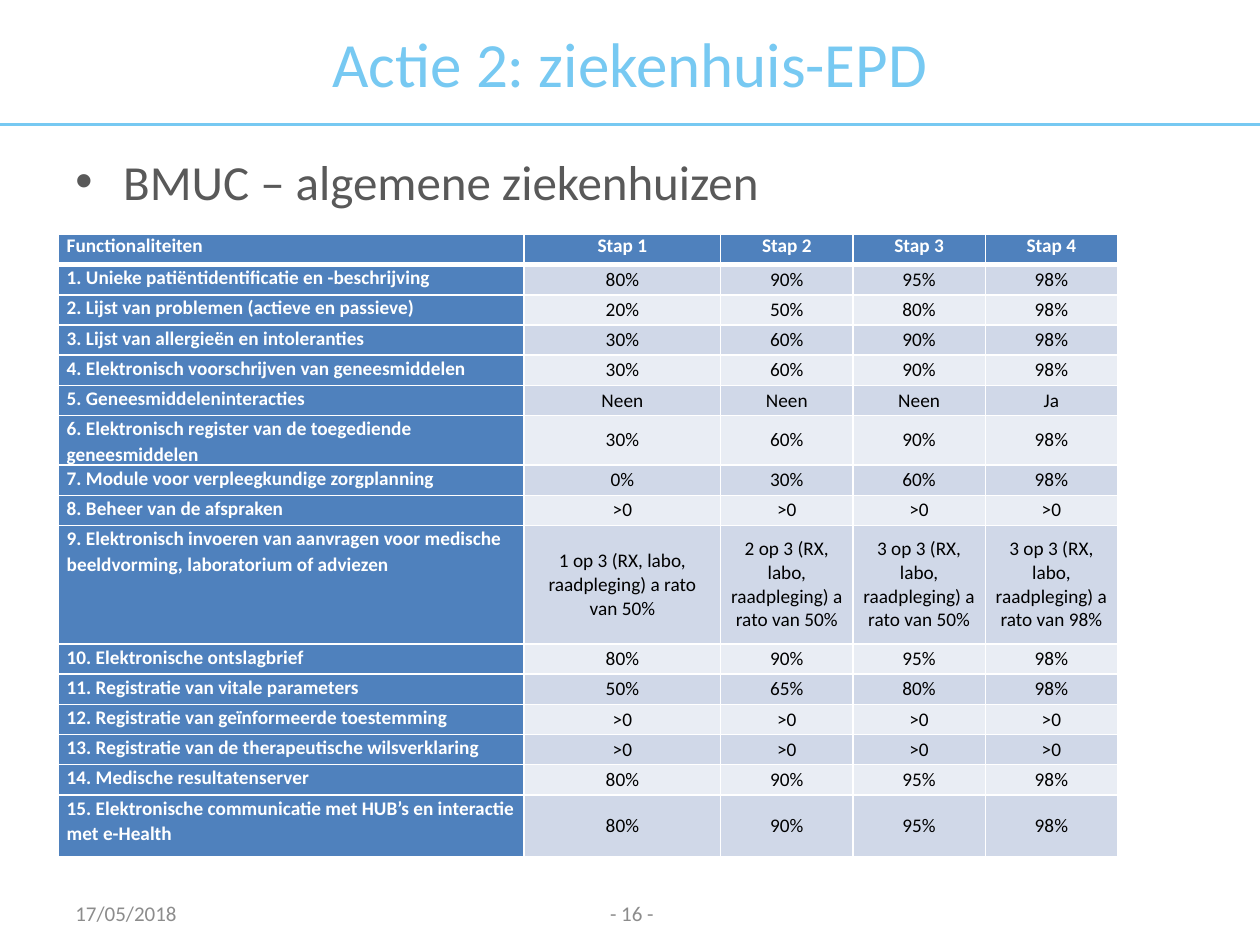
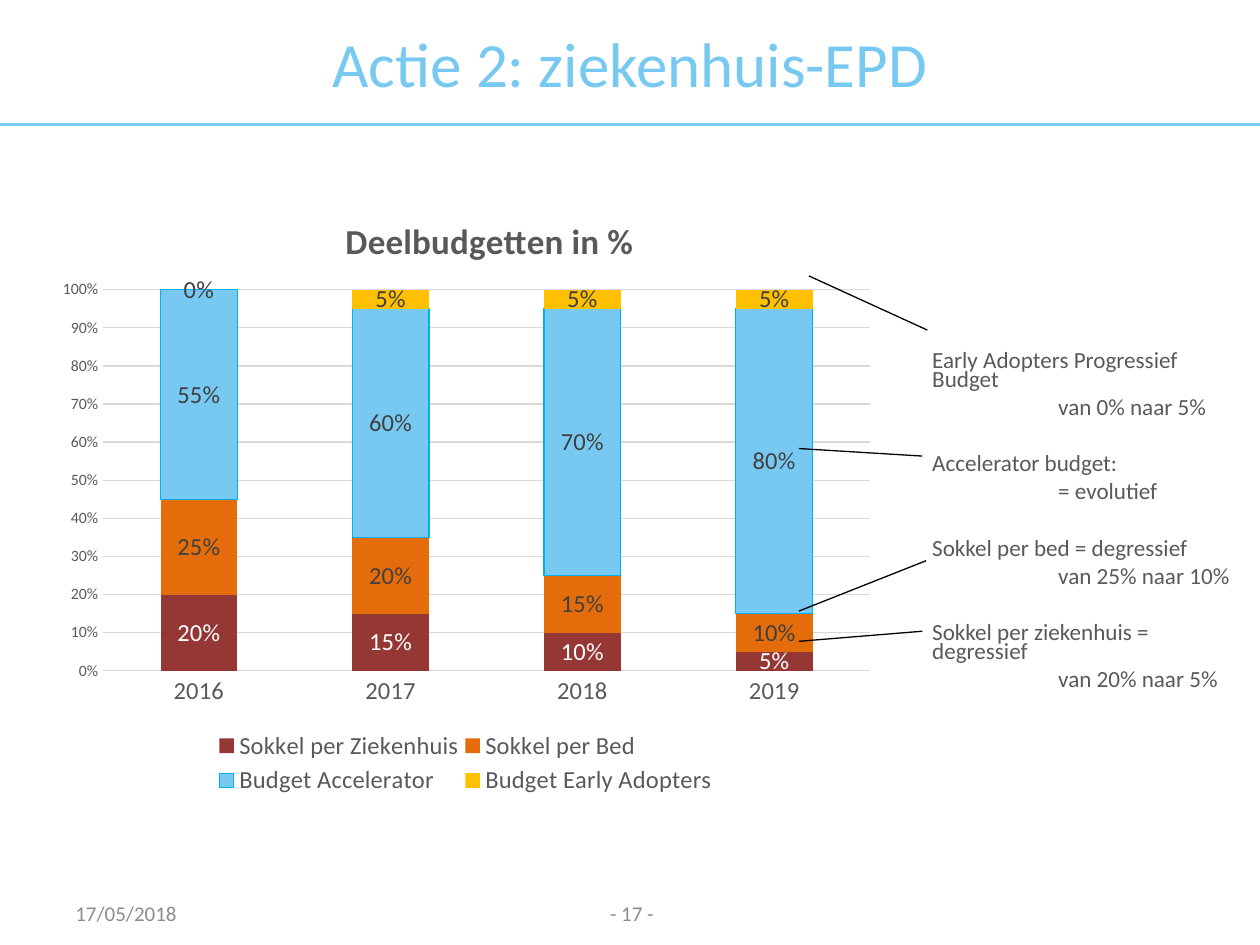
from dataclasses import dataclass

from lxml import etree
from pptx import Presentation
from pptx.chart.data import CategoryChartData
from pptx.dml.color import RGBColor
from pptx.enum.chart import XL_CHART_TYPE, XL_LEGEND_POSITION, XL_TICK_MARK
from pptx.enum.shapes import MSO_CONNECTOR
from pptx.enum.text import MSO_ANCHOR, PP_ALIGN
from pptx.oxml.ns import qn
from pptx.util import Inches, Pt

STACKED = XL_CHART_TYPE.COLUMN_STACKED
LEGEND_BOTTOM = XL_LEGEND_POSITION.BOTTOM
NO_TICK = XL_TICK_MARK.NONE
STRAIGHT = MSO_CONNECTOR.STRAIGHT
MIDDLE, TOP = MSO_ANCHOR.MIDDLE, MSO_ANCHOR.TOP
CENTER, LEFT = PP_ALIGN.CENTER, PP_ALIGN.LEFT


@dataclass(frozen=True)
class Theme:
    font: str = "Calibri"
    accent: str = "77C9F2"
    body: str = "595959"
    footer: str = "8C8C8C"
    white: str = "FFFFFF"
    black: str = "000000"
    label: str = "404040"
    grid: str = "D9D9D9"
    table_head: str = "4F81BD"
    table_bands: tuple = ("D0D8E8", "E9EDF4")
    title_size: float = 36
    bullet_size: float = 28
    chart_title_size: float = 20
    chart_size: float = 14
    note_size: float = 13.2
    footer_size: float = 12
    table_size: float = 11
    axis_size: float = 9


THEME = Theme()

TITLE = "Actie 2: ziekenhuis-EPD"
DATE = "17/05/2018"
SUBJECT = "BMUC – algemene ziekenhuizen"

TABLE_HEAD = ("Functionaliteiten", "Stap 1", "Stap 2", "Stap 3", "Stap 4")
FUNCTIONS = [
    ("Unieke patiëntidentificatie en -beschrijving", "80%", "90%", "95%", "98%"),
    ("Lijst van problemen (actieve en passieve)", "20%", "50%", "80%", "98%"),
    ("Lijst van allergieën en intoleranties", "30%", "60%", "90%", "98%"),
    ("Elektronisch voorschrijven van geneesmiddelen", "30%", "60%", "90%", "98%"),
    ("Geneesmiddeleninteracties", "Neen", "Neen", "Neen", "Ja"),
    ("Elektronisch register van de toegediende geneesmiddelen", "30%", "60%", "90%", "98%"),
    ("Module voor verpleegkundige zorgplanning", "0%", "30%", "60%", "98%"),
    ("Beheer van de afspraken", ">0", ">0", ">0", ">0"),
    ("Elektronisch invoeren van aanvragen voor medische beeldvorming, laboratorium of adviezen",
     "1 op 3 (RX, labo, raadpleging) a rato van 50%",
     "2 op 3 (RX, labo, raadpleging) a rato van 50%",
     "3 op 3 (RX, labo, raadpleging) a rato van 50%",
     "3 op 3 (RX, labo, raadpleging) a rato van 98%"),
    ("Elektronische ontslagbrief", "80%", "90%", "95%", "98%"),
    ("Registratie van vitale parameters", "50%", "65%", "80%", "98%"),
    ("Registratie van geïnformeerde toestemming", ">0", ">0", ">0", ">0"),
    ("Registratie van de therapeutische wilsverklaring", ">0", ">0", ">0", ">0"),
    ("Medische resultatenserver", "80%", "90%", "95%", "98%"),
    ("Elektronische communicatie met HUB’s en interactie met e-Health",
     "80%", "90%", "95%", "98%"),
]
COLUMN_WIDTHS = (3.7, 1.56, 1.05, 1.05, 1.05)
ROW_HEIGHT = 0.24
TALL_ROWS = {9: 0.94, 15: 0.49}

CHART_TITLE = "Deelbudgetten in %"
YEARS = ("2016", "2017", "2018", "2019")
BUDGETS = [
    ("Sokkel per Ziekenhuis", (0.2, 0.15, 0.1, 0.05), "953735", THEME.white, None),
    ("Sokkel per Bed", (0.25, 0.2, 0.15, 0.1), "E46C0A", THEME.label, None),
    ("Budget Accelerator", (0.55, 0.6, 0.7, 0.8), THEME.accent, THEME.label, "00B0F0"),
    ("Budget Early Adopters", (0, 0.05, 0.05, 0.05), "FFC000", THEME.label, None),
]
NOTES = [
    ("Early Adopters Progressief Budget", "van 0% naar 5%"),
    ("Accelerator budget:", "= evolutief"),
    ("Sokkel per bed = degressief", "van 25% naar 10%"),
    ("Sokkel per ziekenhuis = degressief", "van 20% naar 5%"),
]
NOTE_LINES = [
    (6.42, 2.19, 7.36, 2.62),
    (6.34, 3.56, 7.32, 3.62),
    (6.34, 4.85, 7.35, 4.45),
    (6.34, 5.09, 7.32, 5.01),
]


def rgb(color):
    return RGBColor.from_string(color)


def apply_format(target, **values):
    for name, value in values.items():
        setattr(target, name, value)


def format_font(font, size, color, bold=False):
    apply_format(font, name=THEME.font, size=Pt(size), bold=bold)
    font.color.rgb = rgb(color)


def format_line(line, color, width=0.75):
    line.color.rgb = rgb(color)
    line.width = Pt(width)


def write(paragraph, text, size, color, bold=False, **values):
    apply_format(paragraph, **values)
    run = paragraph.add_run()
    run.text = text
    format_font(run.font, size, color, bold)


def add_text_box(slide, left, top, width, height, anchor=TOP):
    box = slide.shapes.add_textbox(*map(Inches, (left, top, width, height)))
    apply_format(box.text_frame, word_wrap=True, vertical_anchor=anchor)
    return box.text_frame


def add_line(slide, ends, color, width=0.75):
    connector = slide.shapes.add_connector(STRAIGHT, *map(Inches, ends))
    format_line(connector.line, color, width)
    etree.SubElement(connector._element.spPr, qn("a:effectLst"))


def set_indent(paragraph, left, first=0, bullet=None):
    properties = paragraph._p.get_or_add_pPr()
    properties.set("marL", str(Inches(left)))
    properties.set("indent", str(Inches(first)))
    if bullet:
        etree.SubElement(properties, qn("a:buFont")).set("typeface", "Arial")
        etree.SubElement(properties, qn("a:buChar")).set("char", bullet)


def add_base_slide(presentation, number):
    slide = presentation.slides.add_slide(presentation.slide_layouts[5])
    add_line(slide, (0, 0.99, 10, 0.99), THEME.accent, 1.5)
    title = slide.shapes.title
    apply_format(title, left=0, top=0, width=Inches(10), height=Inches(0.99))
    title.text_frame.vertical_anchor = MIDDLE
    write(title.text_frame.paragraphs[0], TITLE, THEME.title_size, THEME.accent,
          alignment=CENTER)
    for left, text, alignment in ((0.5, DATE, LEFT), (3.85, f"- {number} -", CENTER)):
        frame = add_text_box(slide, left, 7.05, 2.33, 0.4, MIDDLE)
        write(frame.paragraphs[0], text, THEME.footer_size, THEME.footer, alignment=alignment)
    return slide


def set_borders(cell, bottom):
    properties = cell._tc.get_or_add_tcPr()
    widths = {"a:lnL": 1, "a:lnR": 1, "a:lnT": 1, "a:lnB": bottom}
    for index, (tag, width) in enumerate(widths.items()):
        border = etree.Element(qn(tag), w=str(Pt(width)))
        fill = etree.SubElement(border, qn("a:solidFill"))
        etree.SubElement(fill, qn("a:srgbClr")).set("val", THEME.white)
        properties.insert(index, border)


def format_cell(cell, text, row, column):
    heading = row == 0 or column == 0
    apply_format(cell, margin_left=Inches(0.07), margin_right=Inches(0.07),
                 margin_top=0, margin_bottom=0, vertical_anchor=TOP if heading else MIDDLE)
    cell.fill.solid()
    cell.fill.fore_color.rgb = rgb(THEME.table_head if heading
                                   else THEME.table_bands[(row - 1) % 2])
    set_borders(cell, 1 if row else 3)
    write(cell.text_frame.paragraphs[0], text, THEME.table_size,
          THEME.white if heading else THEME.black, heading,
          alignment=CENTER if column else LEFT, space_after=Pt(2),
          line_spacing=1.07 if row and not column else 1.0)


def add_function_table(slide):
    rows = [TABLE_HEAD] + [(f"{number}. {name}", *steps)
                           for number, (name, *steps) in enumerate(FUNCTIONS, 1)]
    heights = [TALL_ROWS.get(row, ROW_HEIGHT) for row in range(len(rows))]
    frame = slide.shapes.add_table(len(rows), len(TABLE_HEAD), Inches(0.46), Inches(1.86),
                                   Inches(sum(COLUMN_WIDTHS)), Inches(sum(heights)))
    table = frame.table
    for column, width in zip(table.columns, COLUMN_WIDTHS):
        column.width = Inches(width)
    for row, height in zip(table.rows, heights):
        row.height = Inches(height)
    for row, texts in enumerate(rows):
        for column, text in enumerate(texts):
            format_cell(table.cell(row, column), text, row, column)


def set_layout(element, index, inner=False, **fractions):
    layout = element.find(qn("c:layout"))
    if layout is None:
        layout = etree.Element(qn("c:layout"))
        element.insert(index, layout)
    manual = etree.SubElement(layout, qn("c:manualLayout"))
    if inner:
        etree.SubElement(manual, qn("c:layoutTarget")).set("val", "inner")
    for name in ("xMode", "yMode"):
        etree.SubElement(manual, qn(f"c:{name}")).set("val", "edge")
    for name, value in fractions.items():
        etree.SubElement(manual, qn(f"c:{name}")).set("val", str(value))


def format_axes(chart):
    category, value = chart.category_axis, chart.value_axis
    for axis, size in ((category, THEME.chart_size), (value, THEME.axis_size)):
        apply_format(axis, major_tick_mark=NO_TICK, minor_tick_mark=NO_TICK)
        format_font(axis.tick_labels.font, size, THEME.body)
    format_line(category.format.line, THEME.grid)
    value.format.line.fill.background()
    apply_format(value, minimum_scale=0, maximum_scale=1, major_unit=0.1,
                 has_major_gridlines=True)
    format_line(value.major_gridlines.format.line, THEME.grid)
    apply_format(value.tick_labels, number_format="0%", number_format_is_linked=False)


def add_budget_chart(slide):
    data = CategoryChartData(number_format="0%")
    data.categories = YEARS
    for name, values, *_ in BUDGETS:
        data.add_series(name, values)
    area = map(Inches, (0.35, 1.47, 6.69, 4.88))
    chart = slide.shapes.add_chart(STACKED, *area, data).chart
    format_font(chart.font, 10, THEME.black)
    write(chart.chart_title.text_frame.paragraphs[0], CHART_TITLE,
          THEME.chart_title_size, THEME.body, True)
    format_axes(chart)
    plot = chart.plots[0]
    apply_format(plot, gap_width=150, overlap=100, vary_by_categories=False)
    for series, (_, _, color, label_color, outline) in zip(plot.series, BUDGETS):
        series.format.fill.solid()
        series.format.fill.fore_color.rgb = rgb(color)
        if outline:
            format_line(series.format.line, outline)
        labels = series.data_labels
        apply_format(labels, show_value=True, number_format="0%",
                     number_format_is_linked=False)
        format_font(labels.font, THEME.chart_size, label_color)
    chart.has_legend = True
    apply_format(chart.legend, position=LEGEND_BOTTOM, include_in_layout=False)
    format_font(chart.legend.font, THEME.chart_size, THEME.body)
    set_layout(chart.chart_title._element, 1, x=0.35, y=0.04)
    set_layout(chart.plots[0]._element.getparent(), 0, True, x=0.07, y=0.17, w=0.91, h=0.62)
    set_layout(chart.legend._element, 1, x=0.2, y=0.88, w=0.6, h=0.12)


def add_notes(slide):
    frame = add_text_box(slide, 6.8, 2.75, 3.19, 3.04)
    for index, (heading, detail) in enumerate(NOTES):
        first = frame.paragraphs[0] if index == 0 else frame.add_paragraph()
        second = frame.add_paragraph()
        for paragraph, text, indent, before in ((first, heading, 0.5, 21 if index else 0),
                                                (second, detail, 1.5, 5)):
            set_indent(paragraph, indent)
            write(paragraph, text, THEME.note_size, THEME.body,
                  line_spacing=0.7, space_before=Pt(before))


def build_function_slide(presentation):
    slide = add_base_slide(presentation, 16)
    subject = add_text_box(slide, 0.5, 1.15, 9, 0.6).paragraphs[0]
    set_indent(subject, 0.38, -0.38, "•")
    write(subject, SUBJECT, THEME.bullet_size, THEME.body)
    add_function_table(slide)


def build_budget_slide(presentation):
    slide = add_base_slide(presentation, 17)
    add_notes(slide)
    add_budget_chart(slide)
    for ends in NOTE_LINES:
        add_line(slide, ends, THEME.black)


def main():
    presentation = Presentation()
    apply_format(presentation, slide_width=Inches(10), slide_height=Inches(7.5))
    build_function_slide(presentation)
    build_budget_slide(presentation)
    presentation.save("out.pptx")


if __name__ == "__main__":
    main()
